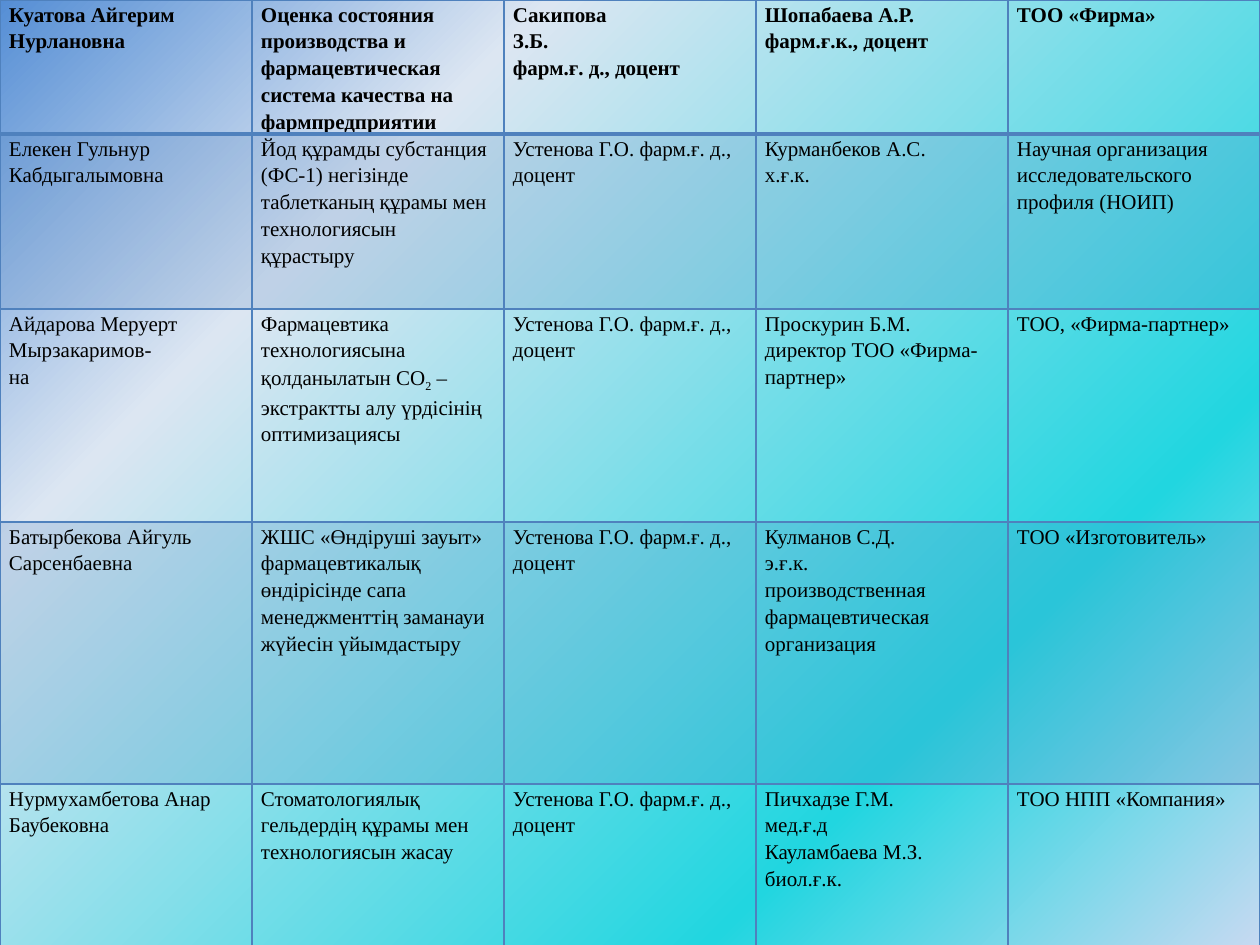
from itertools import product

from lxml.etree import SubElement
from pptx import Presentation
from pptx.dml.color import RGBColor
from pptx.oxml import parse_xml
from pptx.oxml.ns import nsdecls, qn
from pptx.util import Pt

PX = 914400 / 126
BLUE = "4F81BD"
STOPS = [(0, "C6D9F1"), (25, "21D6E0"), (75, "DCE6F2"), (100, "558ED5")]
COL_W = 252
ROW_H = [131, 175, 213, 262, 164]
ADVISER = "Устенова Г.О. фарм.ғ. д., доцент"
ROWS = [
    ["Куатова Айгерим Нурлановна",
     "Оценка состояния производства и фармацевтическая система качества на фармпредприятии",
     "Сакипова\nЗ.Б.\nфарм.ғ. д., доцент",
     "Шопабаева А.Р.\nфарм.ғ.к., доцент",
     "ТОО «Фирма»"],
    ["Елекен Гульнур Кабдыгалымовна",
     "Йод құрамды субстанция (ФС-1) негізінде таблетканың құрамы мен технологиясын құрастыру",
     ADVISER,
     "Курманбеков А.С.\nх.ғ.к.",
     "Научная организация исследовательского профиля (НОИП)"],
    ["Айдарова Меруерт Мырзакаримов-\nна",
     "Фармацевтика технологиясына қолданылатын СО_2_ – экстрактты алу үрдісінің оптимизациясы",
     ADVISER,
     "Проскурин Б.М.\nдиректор ТОО «Фирма-партнер»",
     "ТОО, «Фирма-партнер»"],
    ["Батырбекова Айгуль Сарсенбаевна",
     "ЖШС «Өндіруші зауыт» фармацевтикалық өндірісінде сапа менеджменттің заманауи жүйесін үйымдастыру",
     ADVISER,
     "Кулманов С.Д.\nэ.ғ.к.\nпроизводственная фармацевтическая организация",
     "ТОО «Изготовитель»"],
    ["Нурмухамбетова Анар Баубековна",
     "Стоматологиялық гельдердің құрамы мен технологиясын жасау",
     ADVISER,
     "Пичхадзе Г.М.\nмед.ғ.д\nКауламбаева М.З.\nбиол.ғ.к.",
     "ТОО НПП «Компания»"],
]


def px(n):
    return round(n * PX)


def color(value):
    return RGBColor.from_string(value)


def write(tf, text, size=12, font="Times New Roman", fg="000000", bold=False):
    tf.word_wrap = True
    for i, line in enumerate(text.split("\n")):
        p = tf.paragraphs[0] if i == 0 else tf.add_paragraph()
        p.line_spacing = 1.15
        for j, part in enumerate(line.split("_")):
            r = p.add_run()
            r.text = part
            r.font.size, r.font.name, r.font.bold = Pt(size), font, bold
            r.font.color.rgb = color(fg)
            if j % 2:
                r.font._element.set("baseline", "-25000")


def set_background(s):
    stops = "".join(f'<a:gs pos="{pos * 1000}"><a:srgbClr val="{c}"/></a:gs>' for pos, c in STOPS)
    s._element.cSld.insert(0, parse_xml(
        f'<p:bg {nsdecls("p", "a")}><p:bgPr><a:gradFill rotWithShape="1"><a:gsLst>{stops}</a:gsLst>'
        '<a:path path="circle"><a:fillToRect l="100000" t="100000"/></a:path></a:gradFill>'
        '<a:effectLst/></p:bgPr></p:bg>'))


def set_borders(cell, **widths):
    tc_pr = cell._tc.get_or_add_tcPr()
    for side in "LRTB":
        ln = SubElement(tc_pr, qn(f"a:ln{side}"), w=str(Pt(widths.get(side, 1))))
        fill = SubElement(ln, qn("a:solidFill"))
        SubElement(fill, qn("a:srgbClr"), val=BLUE)


def set_fill(cell, banded):
    if not banded:
        cell.fill.background()
        return
    cell.fill.solid()
    cell.fill.fore_color.rgb = color(BLUE)
    clr = cell._tc.tcPr.find(qn("a:solidFill")).find(qn("a:srgbClr"))
    SubElement(clr, qn("a:alpha"), val="20000")


def add_topics_table(s, x, y):
    cols = len(ROWS[0])
    table = s.shapes.add_table(len(ROWS), cols, px(x), px(y),
                               px(COL_W * cols), px(sum(ROW_H))).table
    table.horz_banding = False
    for col in table.columns:
        col.width = px(COL_W)
    for row, h in zip(table.rows, ROW_H):
        row.height = px(h)
    for i, j in product(range(len(ROWS)), range(cols)):
        cell = table.cell(i, j)
        cell.margin_left = cell.margin_right = px(9)
        cell.margin_top = cell.margin_bottom = 0
        set_borders(cell, **{0: {"B": 2}, 1: {"T": 2}}.get(i, {}))
        set_fill(cell, i % 2 == 1)
        write(cell.text_frame, ROWS[i][j], bold=i == 0)


def main():
    prs = Presentation()
    prs.slide_width, prs.slide_height = px(1260), px(945)
    s = prs.slides.add_slide(prs.slide_layouts[6])
    set_background(s)
    add_topics_table(s, 0, 0)
    prs.save("out.pptx")


if __name__ == "__main__":
    main()
